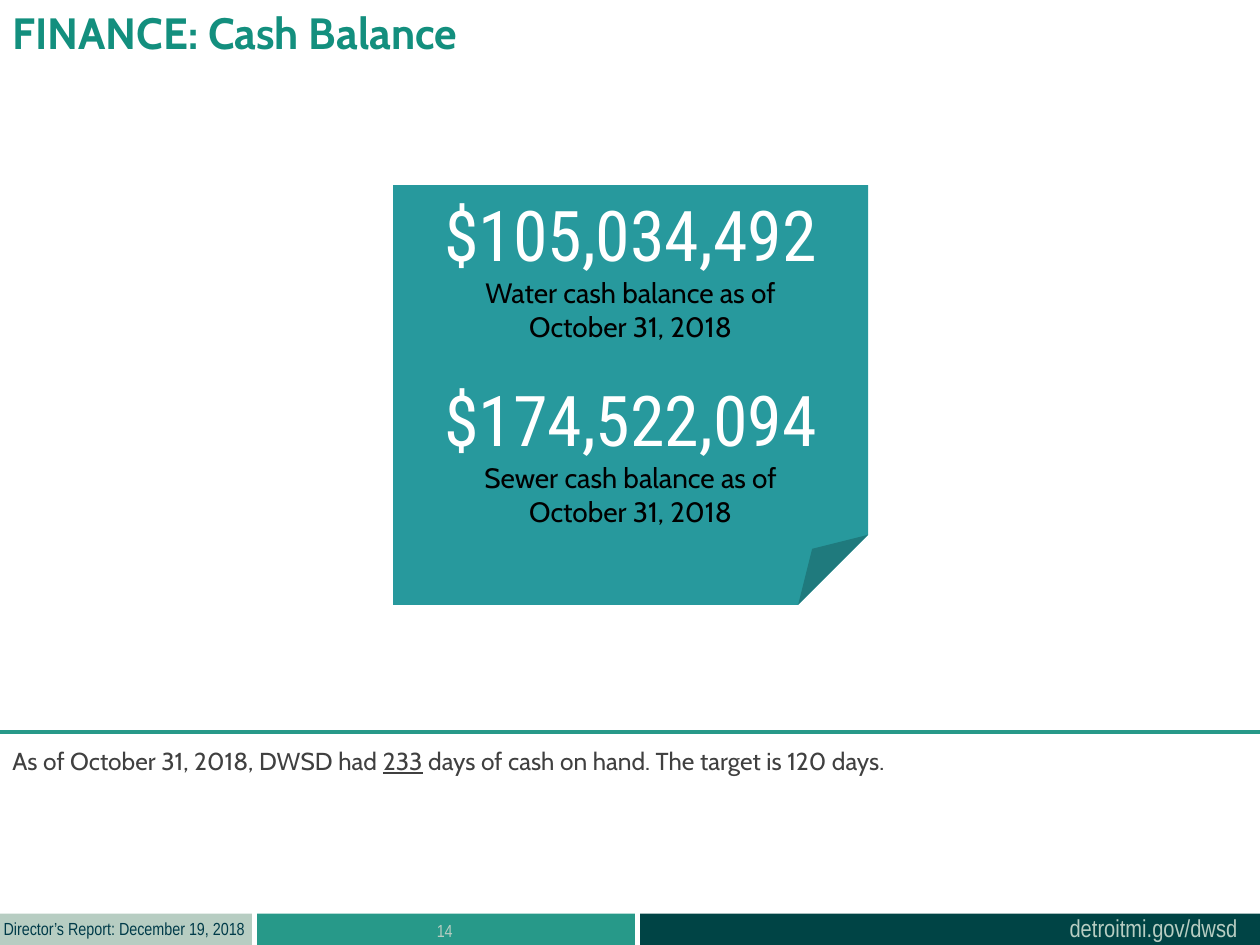
from lxml import etree
from pptx import Presentation
from pptx.dml.color import RGBColor
from pptx.enum import shapes, text
from pptx.oxml.ns import qn
from pptx.util import Inches, Pt

TEAL, DARK, PALE = "279989", "004445", "B7CDC2"
NARROW, CABIN, ROBOTO = "Arial Narrow", "Cabin", "Roboto Condensed"
KIND = shapes.MSO_SHAPE


def paint(color, code):
    color.rgb = RGBColor.from_string(code)


class Deck:
    def __init__(self):
        self.file = Presentation()
        self.file.slide_width = Inches(10)
        self.file.slide_height = Inches(7.5)
        self.slide = self.file.slides.add_slide(self.file.slide_layouts[6])

    def shape(self, box, fill, kind=KIND.RECTANGLE):
        item = self.slide.shapes.add_shape(kind, *map(Inches, box))
        item.shadow.inherit = False
        item.fill.solid()
        paint(item.fill.fore_color, fill)
        item.line.fill.background()
        return item

    def style(self, para, size, face, color, bold=False, center=False):
        font = para.font
        font.size, font.name, font.bold = Pt(size), face, bold
        paint(font.color, color)
        para.alignment = text.PP_ALIGN.CENTER if center else text.PP_ALIGN.LEFT

    def label(self, box, words, *look, wrap=True, **more):
        frame = self.slide.shapes.add_textbox(*map(Inches, box)).text_frame
        frame.word_wrap = wrap
        para = frame.paragraphs[0]
        for part in words if isinstance(words, list) else [words]:
            para.add_run().text = part
        self.style(para, *look, **more)
        return para

    def rule(self, top, color, width):
        line = self.slide.shapes.add_connector(
            shapes.MSO_CONNECTOR.STRAIGHT, Inches(10), Inches(top), 0, Inches(top))
        paint(line.line.color, color)
        line.line.width = Pt(width)
        etree.SubElement(line.element.spPr, qn("a:effectLst"))

    def note(self, box, fill, sums):
        frame = self.shape(box, fill, KIND.FOLDED_CORNER).text_frame
        frame.word_wrap = True
        for i, (total, about) in enumerate(sums):
            head = frame.add_paragraph() if i else frame.paragraphs[0]
            head.text = total
            if i:
                head.space_before = Pt(19.4)
            self.style(head, 40, ROBOTO, "FFFFFF", center=True)
            para = frame.add_paragraph()
            para.text = about
            self.style(para, 16, CABIN, "000000", center=True)


def main():
    deck = Deck()

    # Footer bars and labels
    for left, width, fill in ((2.04, 3, TEAL), (5.08, 4.92, DARK), (0, 2, PALE)):
        deck.shape((left, 7.25, width, 0.25), fill)
    deck.label((8.39, 7.2, 1.55, 0.34), "detroitmi.gov/dwsd", 14, NARROW, PALE, wrap=False)
    deck.label((-0.07, 7.24, 2.19, 0.27), "Director’s Report: December 19, 2018",
               10, NARROW, "003B49", wrap=False)
    deck.label((2.03, 7.25, 3, 0.4), "14", 10, NARROW, PALE, center=True)

    # Title
    deck.label((0, 0, 7.59, 0.77), "FINANCE: Cash Balance", 25, CABIN, "138F7E", bold=True)

    # Days of cash
    para = deck.label((0, 5.87, 10, 0.34),
                      ["As of October 31, 2018, DWSD had ", "233",
                       " days of cash on hand. The target is 120 days."],
                      14, CABIN, "404040")
    para.runs[1].font.underline = True
    deck.rule(5.81, TEAL, 2.25)

    # Balances
    deck.note((3.12, 1.47, 3.77, 3.33), "27999D", [
        ("$105,034,492", "Water cash balance as of\nOctober 31, 2018"),
        ("$174,522,094", "Sewer cash balance as of\nOctober 31, 2018")])

    deck.file.save("out.pptx")


if __name__ == "__main__":
    main()
